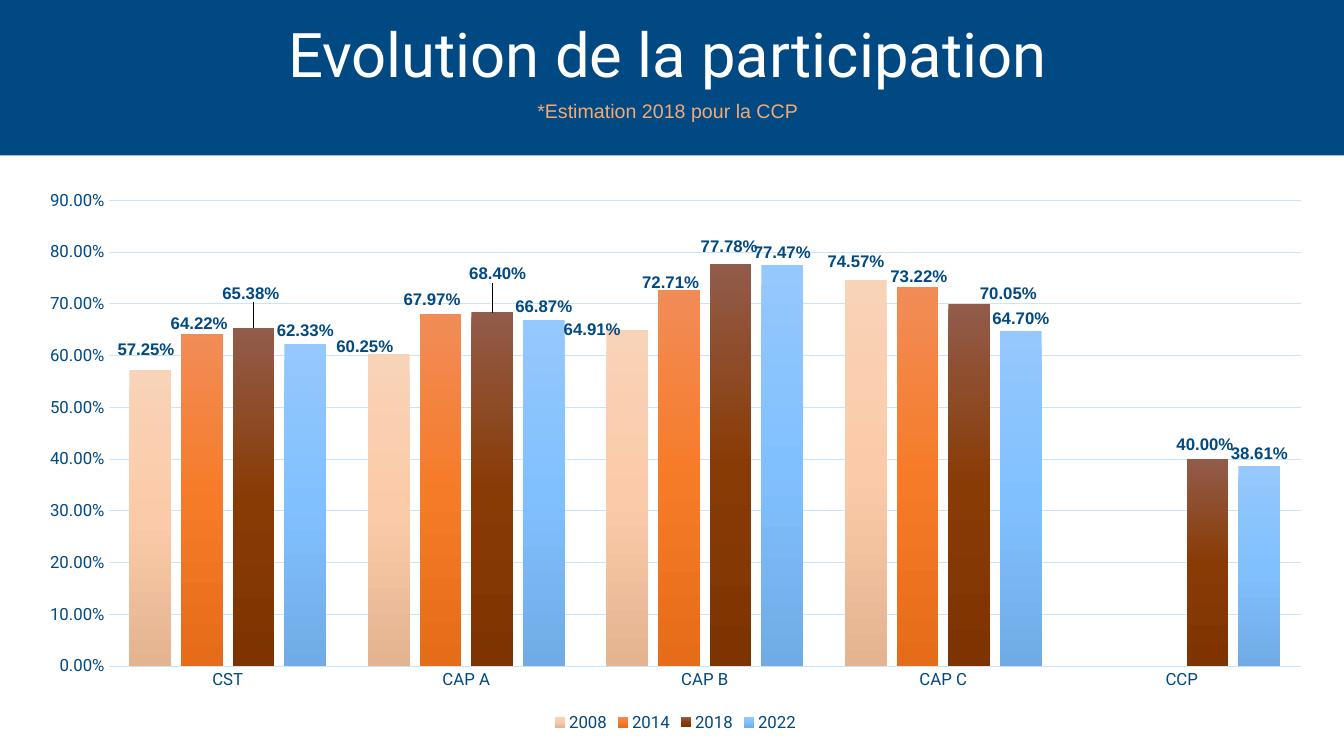
from copy import deepcopy

from pptx import Presentation
from pptx.chart.data import CategoryChartData
from pptx.dml.color import RGBColor
from pptx.enum.chart import XL_CHART_TYPE as ChartType
from pptx.enum.chart import XL_LABEL_POSITION as LabelPosition
from pptx.enum.chart import XL_LEGEND_POSITION as LegendPosition
from pptx.enum.chart import XL_TICK_MARK as TickMark
from pptx.enum.shapes import MSO_SHAPE as Shape
from pptx.enum.text import MSO_ANCHOR as Anchor
from pptx.enum.text import MSO_AUTO_SIZE as AutoSize
from pptx.enum.text import PP_ALIGN as Align
from pptx.oxml import parse_xml
from pptx.oxml.ns import nsdecls, qn
from pptx.util import Pt

NAVY = RGBColor(0x00, 0x49, 0x82)
WHITE = RGBColor(0xFF, 0xFF, 0xFF)
PEACH = RGBColor(0xF4, 0xAA, 0x77)
PALE_BLUE = RGBColor(0xC6, 0xE6, 0xFF)
SAND_SHADES = [RGBColor(0xF9, 0xD3, 0xB8), RGBColor(0xFB, 0xCA, 0xA8), RGBColor(0xE4, 0xB3, 0x90)]
ORANGE_SHADES = [RGBColor(0xF1, 0x8C, 0x57), RGBColor(0xF6, 0x7B, 0x28), RGBColor(0xE5, 0x6C, 0x19)]
BROWN_SHADES = [RGBColor(0x92, 0x5C, 0x4B), RGBColor(0x89, 0x3B, 0x05), RGBColor(0x7E, 0x34, 0x00)]
BLUE_SHADES = [RGBColor(0x95, 0xC8, 0xFD), RGBColor(0x81, 0xC0, 0xFF), RGBColor(0x70, 0xAB, 0xE5)]

PERCENT = "0.00%"
BODIES = ["CST", "CAP A", "CAP B", "CAP C", "CCP"]
TURNOUT = {
    "2008": [0.5725, 0.6025, 0.6491, 0.7457, None],
    "2014": [0.6422, 0.6797, 0.7271, 0.7322, None],
    "2018": [0.6538, 0.684, 0.7778, 0.7005, 0.4],
    "2022": [0.6233, 0.6687, 0.7747, 0.647, 0.3861],
}
SHADES = [SAND_SHADES, ORANGE_SHADES, BROWN_SHADES, BLUE_SHADES]
LABEL_SHIFTS = [
    [(-3, -5), (-17, 4), (-25, 9), (-7, -4)],
    [(-2, 2), (-6, -1), (-6, 4), (1, 2)],
    [(-2, -15), (4, -18), (-1, -3), (28, 2), (-2, -1)],
    [],
]


def style_font(font, name, size, color, bold=False):
    """Set the face, size, colour and weight of a font."""
    font.name = name
    font.size = Pt(size)
    font.color.rgb = color
    font.bold = bold


def make_layout(**settings):
    """Return a manual chart layout holding the given settings in order."""
    items = "".join(f'<c:{key} val="{value}"/>' for key, value in settings.items())
    return parse_xml(
        f'<c:layout {nsdecls("c")}><c:manualLayout>{items}</c:manualLayout></c:layout>'
    )


def add_header(page, left, top, width, height):
    """Draw the navy band with the title and its note."""
    band = page.shapes.add_shape(Shape.RECTANGLE, Pt(left), Pt(top), Pt(width), Pt(height))
    band.shadow.inherit = False
    band.fill.solid()
    band.fill.fore_color.rgb = NAVY
    band.line.fill.background()

    title = page.shapes.title
    title.element.addprevious(band.element)
    title.left, title.top = Pt(left + 63), Pt(top + 8)
    title.width, title.height = Pt(width - 132), Pt(height - 8)
    frame = title.text_frame
    frame.text = "Evolution de la participation\n*Estimation 2018 pour la CCP"
    frame.vertical_anchor = Anchor.TOP
    frame.auto_size = AutoSize.NONE
    heading, note = frame.paragraphs
    for para in (heading, note):
        para.alignment = Align.CENTER
        para.line_spacing = 1.0
        para.space_before = Pt(0)
    note.space_before = Pt(6.5)
    style_font(heading.runs[0].font, "Roboto", 44, WHITE)
    style_font(note.runs[0].font, "Arial", 14, PEACH)


def fill_with_shades(fill, shades):
    """Apply a downward gradient of three evenly spaced shades."""
    fill.gradient()
    fill.gradient_angle = 270
    first = next(fill._xPr.iter(qn("a:gs")))
    first.addnext(deepcopy(first))
    for index, (stop, shade) in enumerate(zip(fill.gradient_stops, shades)):
        stop.position = index / 2
        stop.color.rgb = shade


def style_series(series, shades, shifts, width, height):
    """Colour one year's bars and place its value labels."""
    fill_with_shades(series.format.fill, shades)
    series.invert_if_negative = False
    labels = series.data_labels
    labels.show_value = True
    labels.number_format = PERCENT
    labels.number_format_is_linked = False
    labels.position = LabelPosition.OUTSIDE_END
    style_font(labels.font, "Arial", 12, NAVY, True)
    for index, (across, down) in enumerate(shifts):
        label = series.points[index].data_label
        label.position = LabelPosition.OUTSIDE_END
        style_font(label.font, "Arial", 12, NAVY, True)
    for mark, (across, down) in zip(series._element.iter(qn("c:dLbl")), shifts):
        shift = make_layout(x=round(across / width, 4), y=round(down / height, 4))
        mark.find(qn("c:idx")).addnext(shift)


def style_axes(chart):
    """Format the category and value axes and the gridlines."""
    for axis in (chart.category_axis, chart.value_axis):
        axis.major_tick_mark = axis.minor_tick_mark = TickMark.NONE
        style_font(axis.tick_labels.font, "Roboto", 12, NAVY)
    values = chart.value_axis
    values.minimum_scale, values.maximum_scale, values.major_unit = 0, 0.9, 0.1
    values.tick_labels.number_format = PERCENT
    values.tick_labels.number_format_is_linked = False
    values.format.line.fill.background()
    for line in (chart.category_axis.format.line, values.major_gridlines.format.line):
        line.color.rgb = PALE_BLUE
        line.width = Pt(0.75)


def add_turnout_chart(page, left, top, width, height):
    """Draw the clustered columns of turnout by body and year."""
    data = CategoryChartData(number_format=PERCENT)
    data.categories = BODIES
    for year, values in TURNOUT.items():
        data.add_series(year, values)
    chart = page.shapes.add_chart(
        ChartType.COLUMN_CLUSTERED, Pt(left), Pt(top), Pt(width), Pt(height), data
    ).chart
    style_font(chart.font, "Roboto", 10, NAVY)
    chart.has_title = False
    chart.has_legend = True
    chart.legend.position = LegendPosition.BOTTOM
    chart.legend.include_in_layout = False
    style_font(chart.legend.font, "Roboto", 12, NAVY)
    style_axes(chart)

    plot = chart.plots[0]
    plot.gap_width, plot.overlap = 100, -24
    plot.vary_by_categories = False
    for series, shades, shifts in zip(plot.series, SHADES, LABEL_SHIFTS):
        style_series(series, shades, shifts, width, height)

    area = next(chart.element.iter(qn("c:plotArea")))
    for old in area.findall(qn("c:layout")):
        area.remove(old)
    area.insert(0, make_layout(
        layoutTarget="inner", xMode="edge", yMode="edge", x=0.065, y=0.038, w=0.915, h=0.836
    ))


def main():
    """Build the turnout slide and save the deck."""
    deck = Presentation()
    deck.slide_width, deck.slide_height = Pt(960), Pt(540)
    page = deck.slides.add_slide(deck.slide_layouts.get_by_name("Title Only"))
    add_header(page, 0, 0, 960, 111)
    add_turnout_chart(page, 17, 128, 931, 398)
    deck.save("out.pptx")


if __name__ == "__main__":
    main()
